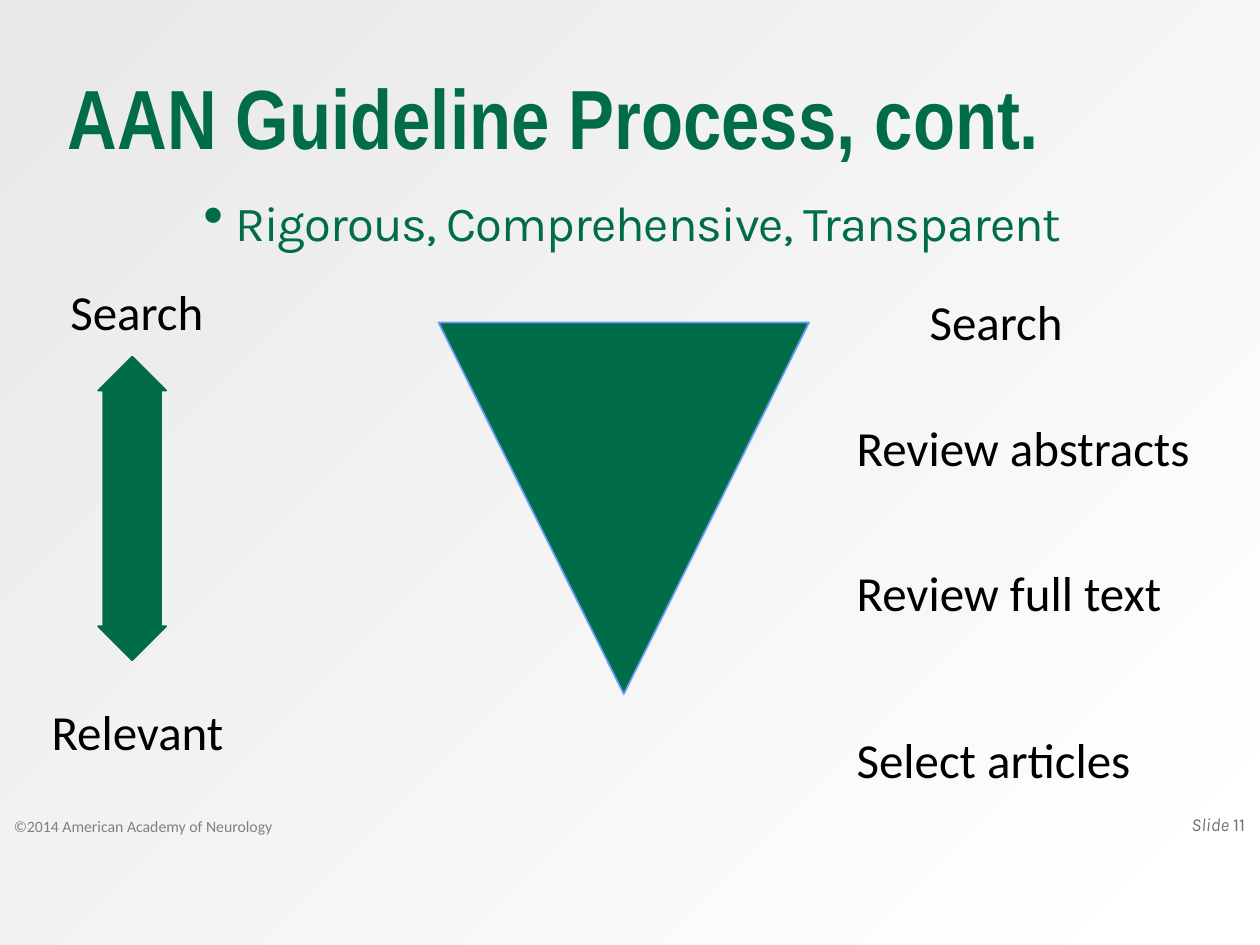
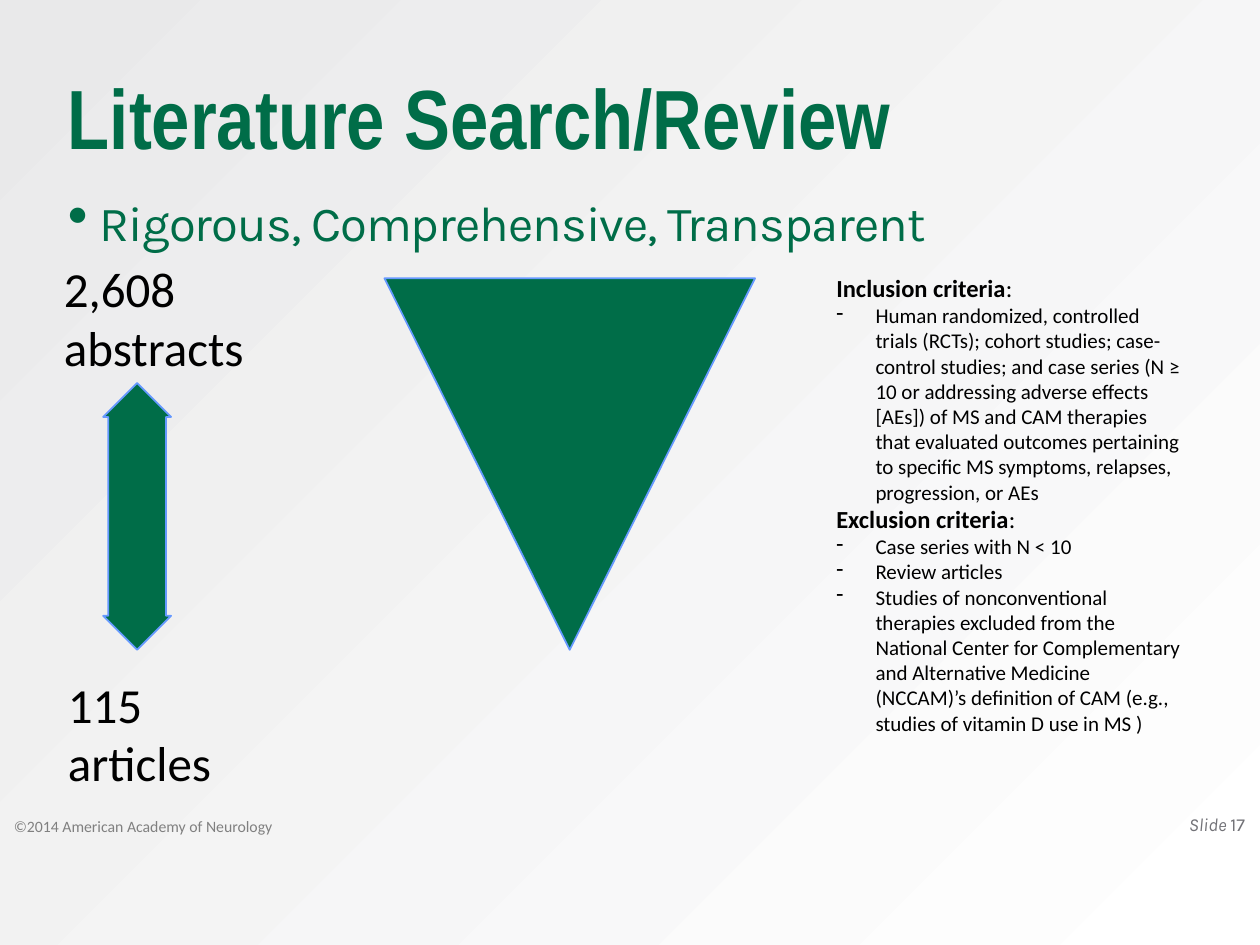
"""Build two guideline slides: the review funnel and the literature search."""
import pptx
import pptx.dml.color
import pptx.enum.shapes
import pptx.enum.text
import pptx.oxml.ns
import pptx.util
from lxml import etree
from pptx.util import Cm

RGBColor = pptx.dml.color.RGBColor
GREEN = RGBColor(0x00, 0x6D, 0x48)
BLUE = RGBColor(0x66, 0x99, 0xFF)
BLACK = RGBColor(0x00, 0x00, 0x00)
COPYRIGHT_GREY = RGBColor(0x80, 0x80, 0x80)
NUMBER_GREY = RGBColor(0x72, 0x72, 0x77)
WHITE = RGBColor(0xFF, 0xFF, 0xFF)
PALE_GREY = RGBColor(0xE9, 0xE9, 0xEA)

ANCHOR = pptx.enum.text.MSO_ANCHOR
ALIGN = pptx.enum.text.PP_ALIGN
SHAPE = pptx.enum.shapes.MSO_SHAPE
qn = pptx.oxml.ns.qn


def add_text(slide, place, paragraphs, size, font="Calibri", color=BLACK,
             anchor=ANCHOR.TOP, insets=(0.25, 0.13), wrap=True):
    """Add a text box and return its text frame."""
    frame = slide.shapes.add_textbox(*[Cm(length) for length in place]).text_frame
    frame.word_wrap = wrap
    frame.vertical_anchor = anchor
    frame.margin_left = frame.margin_right = Cm(insets[0])
    frame.margin_top = frame.margin_bottom = Cm(insets[1])
    frame.text = paragraphs
    for paragraph in frame.paragraphs:
        for run in paragraph.runs:
            run.font.name = font
            run.font.size = pptx.util.Pt(size)
            run.font.color.rgb = color
    return frame


def add_bullet(paragraph, mark, indent, percent=100):
    """Give a paragraph a hanging bullet."""
    properties = paragraph._p.get_or_add_pPr()
    properties.set("marL", str(Cm(indent)))
    properties.set("indent", str(-Cm(indent)))
    etree.SubElement(properties, qn("a:buSzPct")).set("val", str(percent * 1000))
    etree.SubElement(properties, qn("a:buChar")).set("char", mark)


CRITERIA = [
    ("Inclusion criteria", [
        "Human randomized, controlled trials (RCTs); cohort studies; case-control "
        "studies; and case series (N ≥ 10 or addressing adverse effects [AEs]) of MS "
        "and CAM therapies that evaluated outcomes pertaining to specific MS symptoms, "
        "relapses, progression, or AEs",
    ]),
    ("Exclusion criteria", [
        "Case series with N < 10",
        "Review articles",
        "Studies of nonconventional therapies excluded from the National Center for "
        "Complementary and Alternative Medicine (NCCAM)’s definition of CAM (e.g., "
        "studies of vitamin D use in MS )",
    ]),
]

PAGES = [
    {
        "title": "AAN Guideline Process, cont.",
        "number": "11",
        "motto_align": ALIGN.CENTER,
        "funnel": (8.84, 6.5),
        "arrow": (1.98, 7.19, 1.37, 6.12),
        "arrow_line": GREEN,
        "labels": [
            ("Search", (1.17, 5.54, 4.14, 1.45)),
            ("Relevant", (0.79, 14.02, 4.9, 1.45)),
            ("Search", (18.49, 5.74, 4.14, 1.45)),
            ("Review abstracts", (17.02, 8.28, 7.7, 1.45)),
            ("Review full text", (17.02, 11.2, 7.06, 1.45)),
            ("Select articles", (17.02, 14.58, 7.06, 1.45)),
        ],
        "criteria": [],
    },
    {
        "title": "Literature Search/Review",
        "number": "17",
        "motto_align": ALIGN.LEFT,
        "funnel": (7.75, 5.61),
        "arrow": (2.08, 7.72, 1.37, 5.38),
        "arrow_line": BLUE,
        "labels": [
            ("2,608\vabstracts", (1.04, 5.08, 5.23, 2.64)),
            ("115 articles", (1.12, 13.46, 4.9, 2.64)),
        ],
        "criteria": CRITERIA,
    },
]

deck = pptx.Presentation()
deck.slide_width, deck.slide_height = Cm(25.4), Cm(19.05)

backdrop = deck.slide_master.background.fill
backdrop.gradient()
for stop, color in zip(backdrop.gradient_stops, (WHITE, PALE_GREY)):
    stop.color.rgb = color
gradient = deck.slide_master.element.find(".//" + qn("p:bg")).find(".//" + qn("a:gradFill"))
glow = etree.Element(qn("a:path"), path="circle")
etree.SubElement(glow, qn("a:fillToRect"), l="100000", t="100000")
gradient.replace(gradient.find(qn("a:lin")), glow)

for page in PAGES:
    slide = deck.slides.add_slide(deck.slide_layouts[6])

    add_text(slide, (0.28, 14.35, 15.24, 2.54), "©2014 American Academy of Neurology", 9,
             color=COPYRIGHT_GREY, anchor=ANCHOR.BOTTOM, insets=(0, 0.05), wrap=False)

    title = add_text(slide, (1.37, 0.94, 22.76, 2.49), page["title"], 48, "Arial Narrow",
                     GREEN, ANCHOR.BOTTOM, (0, 0.05)).paragraphs[0]
    title.line_spacing = 0.9
    title.runs[0].font.bold = True

    motto = add_text(slide, (1.37, 3.89, 22.76, 11.84), "Rigorous, Comprehensive, Transparent",
                     28, "Karla", GREEN, insets=(0, 0)).paragraphs[0]
    add_bullet(motto, "•", 0.64, 120)
    motto.alignment = page["motto_align"]
    motto.runs[0].font._element.set("spc", "-50")

    footer = add_text(slide, (19.43, 16.1, 5.92, 1.02), "Slide ", 10.5, "Karla",
                      NUMBER_GREY, ANCHOR.MIDDLE).paragraphs[0]
    footer.alignment = ALIGN.RIGHT
    footer.runs[0].font.italic = True
    number = footer.add_run()
    number.text = page["number"]
    number.font.name = "Karla"
    number.font.size = pptx.util.Pt(10.5)
    number.font.color.rgb = NUMBER_GREY

    funnel_place = (*page["funnel"], 7.47, 7.49)
    for kind, place, outline in (
        (SHAPE.ISOSCELES_TRIANGLE, funnel_place, BLUE),
        (SHAPE.UP_DOWN_ARROW, page["arrow"], page["arrow_line"]),
    ):
        figure = slide.shapes.add_shape(kind, *[Cm(length) for length in place])
        figure.shadow.inherit = False
        figure.fill.solid()
        figure.fill.fore_color.rgb = GREEN
        figure.line.color.rgb = outline
        figure.line.width = pptx.util.Pt(1)
        if kind == SHAPE.ISOSCELES_TRIANGLE:
            figure.rotation = 180
        else:
            figure.adjustments[1] = 0.85

    for label, place in page["labels"]:
        add_text(slide, place, label, 28)

    if page["criteria"]:
        lines = [line for heading, rules in page["criteria"] for line in (heading, *rules)]
        headings = [heading for heading, rules in page["criteria"]]
        criteria = add_text(slide, (16.61, 5.38, 7.52, 9.65), "\n".join(lines), 12)
        for paragraph in criteria.paragraphs:
            if paragraph.text not in headings:
                add_bullet(paragraph, "-", 0.79)
                continue
            paragraph.runs[0].font.bold = True
            paragraph.add_run().text = ":"
            for run in paragraph.runs:
                run.font.name = "Calibri"
                run.font.size = pptx.util.Pt(14)
                run.font.color.rgb = BLACK

deck.save("out.pptx")
